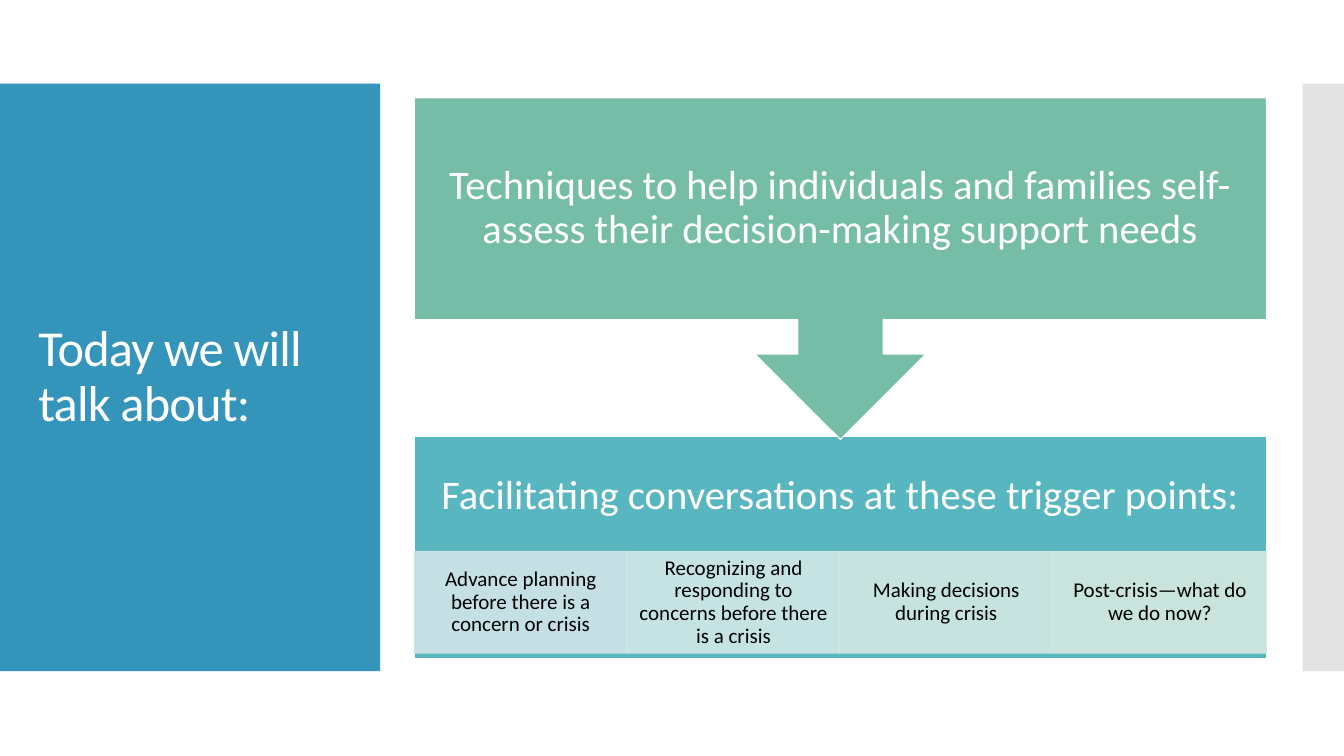
import pptx
import pptx.dml.color
import pptx.enum.shapes
import pptx.enum.text
import pptx.oxml.ns
import pptx.util
import lxml.etree

PX = 9144
HUES = {
    "blue": "3494BA", "gray": "C8C8C8", "teal": "58B6C0", "green": "75BDA7",
    "white": "FFFFFF", "black": "000000",
}
STEPS = [
    ("Advance planning before there is a concern or crisis", "D1E5E8"),
    ("Recognizing and responding to concerns before there is a crisis", "D3E8E7"),
    ("Making decisions during crisis", "D4E8E4"),
    ("Post-crisis—what do we do now?", "D6E8E1"),
]
LEFT, WIDE = 411, 845
KINDS = pptx.enum.shapes.MSO_SHAPE
ALIGN = pptx.enum.text.PP_ALIGN


def scale(box):
    return [pptx.util.Emu(n * PX) for n in box]


def paint(fill, hue, alpha):
    fill.solid()
    fill.fore_color.rgb = pptx.dml.color.RGBColor.from_string(hue)
    if alpha < 100:
        color = fill._xPr.find(".//" + pptx.oxml.ns.qn("a:srgbClr"))
        mark = lxml.etree.SubElement(color, pptx.oxml.ns.qn("a:alpha"))
        mark.set("val", str(alpha * 1000))


def add_block(slide, box, hue, edge=None, alpha=100, kind=KINDS.RECTANGLE):
    block = slide.shapes.add_shape(kind, *scale(box))
    block.shadow.inherit = False
    paint(block.fill, hue, alpha)
    if edge:
        paint(block.line.fill, edge, alpha)
        block.line.width = pptx.util.Pt(0.85)
    else:
        block.line.fill.background()
    return block


def write(shape, text, size, hue, pad, align=ALIGN.CENTER):
    frame = shape.text_frame
    frame.text = text
    frame.word_wrap = True
    frame.auto_size = pptx.enum.text.MSO_AUTO_SIZE.NONE
    frame.vertical_anchor = pptx.enum.text.MSO_ANCHOR.MIDDLE
    side, top = scale(pad)
    frame.margin_left = frame.margin_right = side
    frame.margin_top = frame.margin_bottom = top
    line = frame.paragraphs[0]
    line.alignment = align
    line.line_spacing = 0.9
    line.font.name = "Calibri"
    line.font.size = pptx.util.Pt(size)
    line.font.color.rgb = pptx.dml.color.RGBColor.from_string(hue)


def add_label(slide, box, text):
    label = slide.shapes.add_textbox(*scale(box))
    write(label, text, 29, HUES["white"], (23, 23))


def add_title(slide, box, text):
    title = slide.shapes.title
    title.left, title.top, title.width, title.height = scale(box)
    write(title, text, 36, HUES["white"], (10, 5), ALIGN.LEFT)
    run = title.text_frame.paragraphs[0].runs[0]
    run.font._element.set("spc", "-60")
    title.element.getparent().append(title.element)


def add_steps(slide):
    edges = [LEFT + round(i * WIDE / len(STEPS)) for i in range(len(STEPS))]
    for left, (text, hue) in zip(edges, STEPS):
        cell = add_block(slide, (left, 547, 211, 101), hue, hue, 90)
        write(cell, text, 15, HUES["black"], (12, 2))


def main():
    deck = pptx.Presentation()
    deck.slide_width, deck.slide_height = scale((1333, 750))
    slide = deck.slides.add_slide(deck.slide_layouts[5])

    add_block(slide, (0, 83, 377, 583), HUES["blue"])
    add_block(slide, (1292, 83, 41, 583), HUES["gray"], alpha=50)
    add_title(slide, (28, 123, 322, 503), "Today we will talk about:")

    add_block(slide, (LEFT, 433, WIDE, 220), HUES["teal"], HUES["white"])
    add_label(slide, (LEFT, 433, WIDE, 119),
              "Facilitating conversations at these trigger points:")
    add_steps(slide)

    arrow = add_block(slide, (LEFT, 97, WIDE, 339), HUES["green"], HUES["white"],
                      kind=KINDS.UP_ARROW_CALLOUT)
    arrow.rotation = 180
    add_label(slide, (LEFT, 97, WIDE, 220),
              "Techniques to help individuals and families "
              "self-assess their decision-making support needs")
    deck.save("out.pptx")


if __name__ == "__main__":
    main()
